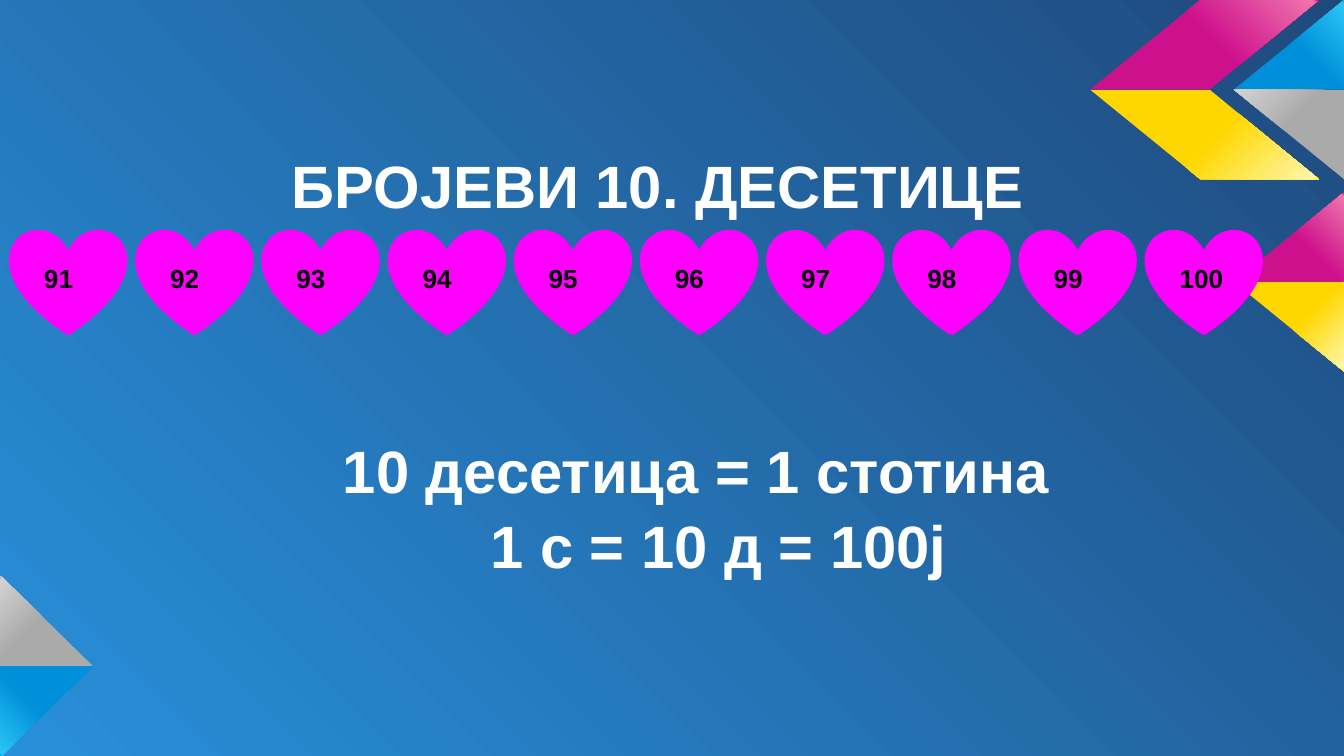
from dataclasses import dataclass

from lxml import etree
from pptx import Presentation
from pptx.dml.color import RGBColor
from pptx.enum.shapes import MSO_SHAPE
from pptx.enum.text import MSO_ANCHOR, MSO_AUTO_SIZE, PP_ALIGN
from pptx.oxml.ns import nsdecls, qn
from pptx.util import Pt

HEART = MSO_SHAPE.HEART
LEFT = PP_ALIGN.LEFT
TOP, MIDDLE = MSO_ANCHOR.TOP, MSO_ANCHOR.MIDDLE
NO_FIT = MSO_AUTO_SIZE.NONE


@dataclass(frozen=True)
class Theme:
    font: str = "Arial"
    text: str = "FFFFFF"
    number: str = "000000"
    heart: str = "FF00FF"
    large: int = 32
    small: int = 14
    inset: float = 7.2
    background: tuple = ((0, "2890DA"), (100, "1F497D"))
    blue: tuple = ("0090DA", "2BC4F3", "00AEEE")
    grey: tuple = ("AAAAAA", "D2D2D2", "B9B9B9")
    pink: tuple = ("CD118C", "F074AC", "EB008B")
    yellow: tuple = ("FFD700", "FFF7A9", "FFF100")


def write_text(paragraph, text, *, font, size, color, indent=0, space_before=0):
    paragraph.alignment = LEFT
    paragraph.space_before = Pt(space_before)
    properties = paragraph._p.get_or_add_pPr()
    properties.set("marL", str(Pt(indent)))
    properties.set("indent", "0")
    etree.SubElement(properties, qn("a:buNone"))
    run = paragraph.add_run()
    run.text = text
    run.font.name = font
    run.font.size = Pt(size)
    run.font.bold = True
    run.font.color.rgb = RGBColor.from_string(color)


def apply_gradient(owner, fill, stops, direction):
    fill.solid()
    solid = owner.find(".//" + qn("a:solidFill"))
    stop_list = "".join(
        f'<a:gs pos="{position * 1000}"><a:srgbClr val="{color}"/></a:gs>'
        for position, color in stops
    )
    gradient = etree.fromstring(
        f'<a:gradFill {nsdecls("a")} rotWithShape="1">'
        f"<a:gsLst>{stop_list}</a:gsLst>{direction}</a:gradFill>"
    )
    solid.getparent().replace(solid, gradient)


class SlideBuilder:
    def __init__(self, slide, theme):
        self.slide = slide
        self.theme = theme

    def background(self):
        apply_gradient(
            self.slide.element, self.slide.background.fill, self.theme.background,
            '<a:path path="circle">'
            '<a:fillToRect t="100000" r="100000"/></a:path>',
        )

    def facet(self, points, colors, angle):
        base, light, edge = colors
        corners = [(Pt(x), Pt(y)) for x, y in points]
        builder = self.slide.shapes.build_freeform(*corners[0])
        builder.add_line_segments(corners[1:], close=True)
        shape = builder.convert_to_shape()
        shape.shadow.inherit = False
        shape.line.fill.background()
        apply_gradient(
            shape.element, shape.fill,
            ((0, base), (54, base), (98, light), (100, edge)),
            f'<a:lin ang="{angle * 60000}" scaled="0"/>',
        )

    def frame(self, shape, anchor):
        frame = shape.text_frame
        frame.word_wrap = True
        frame.auto_size = NO_FIT
        frame.vertical_anchor = anchor
        inset = Pt(self.theme.inset)
        frame.margin_left = frame.margin_right = inset
        frame.margin_top = frame.margin_bottom = inset
        return frame

    def placeholder(self, index, box, lines):
        shape = self.slide.placeholders[index]
        shape.left, shape.top, shape.width, shape.height = map(Pt, box)
        frame = self.frame(shape, TOP)
        for number, (text, indent, space_before) in enumerate(lines):
            paragraph = frame.add_paragraph() if number else frame.paragraphs[0]
            write_text(
                paragraph, text, font=self.theme.font, size=self.theme.large,
                color=self.theme.text, indent=indent, space_before=space_before,
            )

    def heart(self, left, top, width, height, text):
        shape = self.slide.shapes.add_shape(HEART, *map(Pt, (left, top, width, height)))
        color = RGBColor.from_string(self.theme.heart)
        shape.shadow.inherit = False
        shape.fill.solid()
        shape.fill.fore_color.rgb = color
        shape.line.color.rgb = color
        shape.line.width = Pt(3)
        write_text(
            self.frame(shape, MIDDLE).paragraphs[0], text, font=self.theme.font,
            size=self.theme.small, color=self.theme.number,
        )


def main():
    presentation = Presentation()
    presentation.slide_width, presentation.slide_height = Pt(720), Pt(405)
    slide = presentation.slides.add_slide(presentation.slide_layouts[1])
    theme = Theme()
    builder = SlideBuilder(slide, theme)

    builder.background()
    facets = (
        (((50, 357), (0, 357), (0, 405), (1, 405)), theme.blue, 135),
        (((50, 357), (1, 309), (0, 309), (0, 357)), theme.grey, 225),
        (((720, 0), (661, 48), (720, 48)), theme.blue, 315),
        (((661, 48), (720, 96), (720, 48)), theme.grey, 225),
        (((648, 48), (706.5, 0), (643, 0), (584, 48)), theme.pink, 315),
        (((720, 103), (661, 151), (720, 151)), theme.pink, 315),
        (((661, 151), (720, 199), (720, 151)), theme.yellow, 45),
        (((648, 48), (706.5, 96), (643, 96), (584, 48)), theme.yellow, 45),
    )
    for points, colors, angle in facets:
        builder.facet(points, colors, angle)

    builder.placeholder(0, (149, 72.5, 450, 50), [("БРОЈЕВИ 10. ДЕСЕТИЦЕ", 0, 0)])
    builder.placeholder(1, (176.5, 225, 450, 100), [
        ("10 десетица = 1 стотина", 0, 0),
        ("1 с = 10 д = 100ј", 79, 1.8),
    ])

    for position, number in enumerate(range(91, 101)):
        builder.heart(6.5 + 67.6 * position, 124, 60, 54, str(number))

    presentation.save("out.pptx")


if __name__ == "__main__":
    main()
